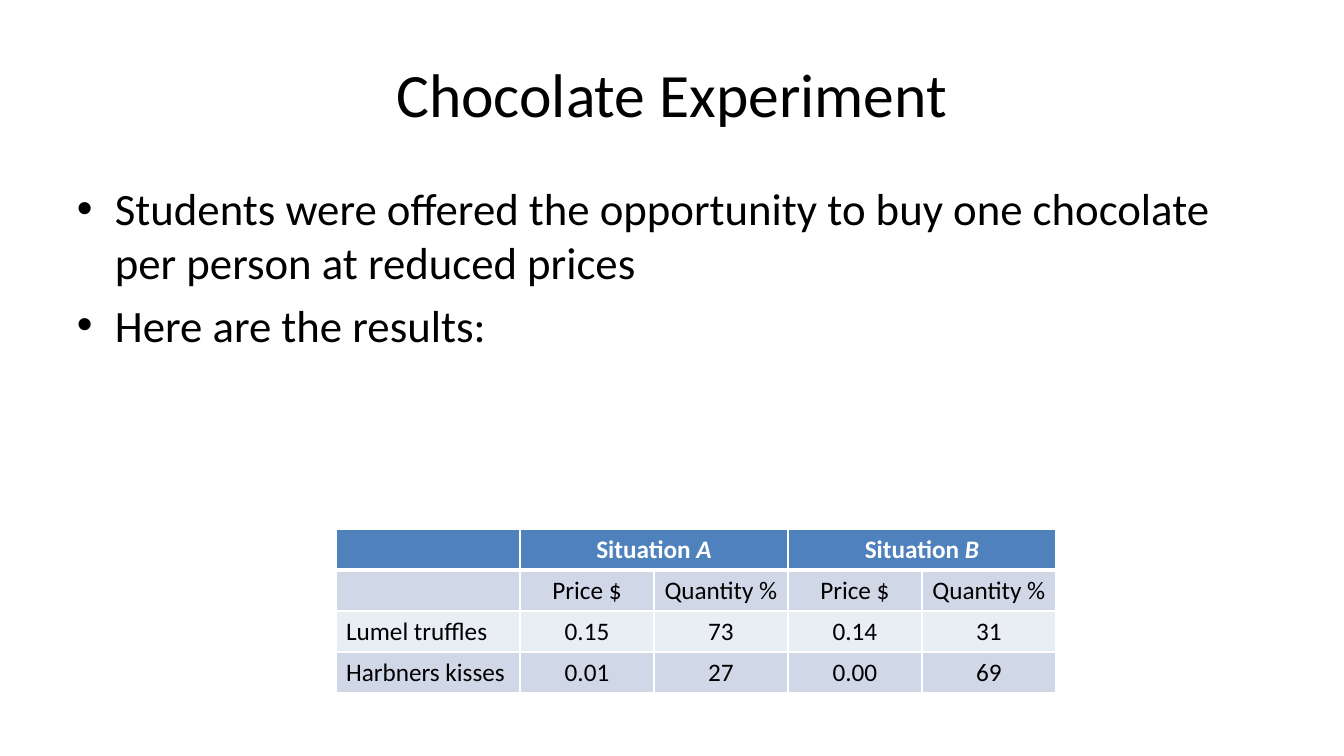
from lxml import etree
from pptx import Presentation
from pptx.dml.color import RGBColor
from pptx.enum.text import MSO_ANCHOR, PP_ALIGN
from pptx.oxml.ns import qn
from pptx.util import Emu, Pt

LEFT, CENTER = PP_ALIGN.LEFT, PP_ALIGN.CENTER
TOP, MIDDLE = MSO_ANCHOR.TOP, MSO_ANCHOR.MIDDLE

TITLE = "Chocolate Experiment"
POINTS = [
    "Students were offered the opportunity to buy one chocolate per person at reduced prices",
    "Here are the results:",
]
GROUPS = [(1, "A"), (3, "B")]
ROWS = [
    ["", "Price $", "Quantity %", "Price $", "Quantity %"],
    ["Lumel truffles", "0.15", "73", "0.14", "31"],
    ["Harbners kisses", "0.01", "27", "0.00", "69"],
]
COLS = [184, 134, 134, 134, 134]
ROW = 41
FONT = "Calibri"
BLACK, WHITE, BLUE = "000000", "FFFFFF", "4F81BD"
BANDS = ["D0D8E8", "E9EDF4"]


def px(n):
    return Emu(round(n * 9144000 / 1008))


def color(code):
    return RGBColor.from_string(code)


def style(para, size, code=BLACK, align=LEFT, bold=False):
    para.alignment = align
    font = para.font
    font.name, font.size, font.bold = FONT, Pt(size), bold
    font.color.rgb = color(code)


def add_box(slide, top, high, anchor):
    frame = slide.shapes.add_textbox(px(67), px(top), px(1210), px(high)).text_frame
    frame.word_wrap = True
    frame.vertical_anchor = anchor
    return frame


def add_bullet(para):
    props = para._p.get_or_add_pPr()
    props.set("marL", str(px(38)))
    props.set("indent", str(-px(38)))
    face = etree.SubElement(props, qn("a:buFont"))
    face.set("typeface", "Arial")
    etree.SubElement(props, qn("a:buChar")).set("char", "•")
    para.space_before = Pt(6.4)


def paint(cell, fill, above, below):
    cell.fill.solid()
    cell.fill.fore_color.rgb = color(fill)
    props = cell._tc.get_or_add_tcPr()
    sides = [("L", 1), ("R", 1), ("T", above), ("B", below)]
    for spot, (side, wide) in enumerate(sides):
        line = etree.Element(qn("a:ln" + side), w=str(Pt(wide)))
        solid = etree.SubElement(line, qn("a:solidFill"))
        etree.SubElement(solid, qn("a:srgbClr")).set("val", WHITE)
        props.insert(spot, line)


def add_grid(slide):
    count = len(ROWS) + 1
    grid = slide.shapes.add_table(
        count, len(COLS), px(336), px(529), px(sum(COLS)), px(ROW * count)
    ).table
    grid.first_row = grid.horz_banding = False
    for col, wide in zip(grid.columns, COLS):
        col.width = px(wide)
    for row in grid.rows:
        row.height = px(ROW)

    for c in range(len(COLS)):
        head = grid.cell(0, c)
        paint(head, BLUE, 1, 3)
        style(head.text_frame.paragraphs[0], 18, WHITE, CENTER, True)
    for c, name in GROUPS:
        head = grid.cell(0, c)
        head.merge(grid.cell(0, c + 1))
        para = head.text_frame.paragraphs[0]
        para.add_run().text = "Situation "
        run = para.add_run()
        run.text = name
        run.font.italic = True

    for r, row in enumerate(ROWS, 1):
        for c, text in enumerate(row):
            cell = grid.cell(r, c)
            cell.text = text
            paint(cell, BANDS[(r - 1) % 2], 3 if r == 1 else 1, 1)
            style(cell.text_frame.paragraphs[0], 18, align=CENTER if c else LEFT)


def main():
    deck = Presentation()
    deck.slide_width, deck.slide_height = px(1344), px(756)
    slide = deck.slides.add_slide(deck.slide_layouts[6])

    frame = add_box(slide, 30, 126, MIDDLE)
    frame.text = TITLE
    style(frame.paragraphs[0], 44, align=CENTER)

    frame = add_box(slide, 176, 499, TOP)
    frame.text = "\n".join(POINTS)
    for para in frame.paragraphs:
        style(para, 32)
        add_bullet(para)

    add_grid(slide)
    deck.save("out.pptx")


if __name__ == "__main__":
    main()
